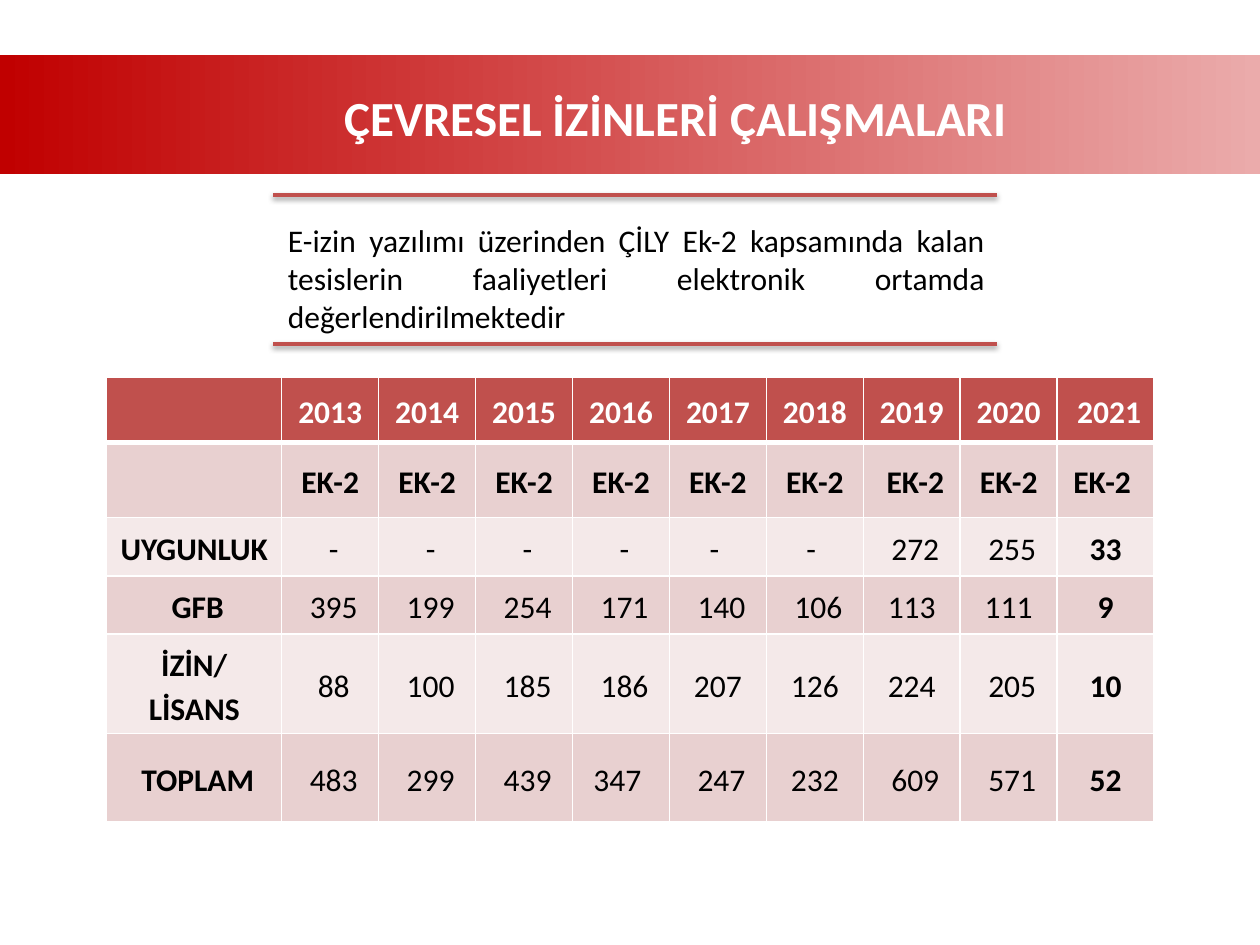
from dataclasses import dataclass

from lxml.etree import SubElement
from pptx import Presentation
from pptx.dml.color import RGBColor
from pptx.enum.shapes import MSO_CONNECTOR, MSO_SHAPE
from pptx.enum.text import MSO_ANCHOR, PP_ALIGN
from pptx.oxml import parse_xml
from pptx.oxml.ns import nsdecls, qn
from pptx.slide import Slide
from pptx.util import Pt

COLUMN_WIDTHS = [100] + [55.4] * 9
ROW_HEIGHTS = [37.2, 43, 33.3, 33.3, 50.4, 50.4]
PERMITS = [
    ["", "2013", "2014", "2015", "2016", "2017", "2018", "2019", "_2020_", "_2021"],
    ["", "EK-2", "EK-2", "EK-2", "EK-2", "EK-2", "EK-2", "_EK-2", "EK-2", "EK-2_"],
    ["UYGUNLUK", "_-", "_-", "_-", "_-", "-_", "-_", "_272", "_255", "33"],
    ["_GFB", "_395", "_199", "_254", "_171", "_140", "_106", "113", "111", "9"],
    ["İZİN/\nLİSANS", "_88", "_100", "_185", "_186", "207", "126", "224", "_205", "10"],
    ["_TOPLAM", "_483", "_299", "_439", "347_", "_247", "232", "_609", "_571", "52"],
]


def color(value):
    return RGBColor.from_string(value)


@dataclass
class PermitPage:
    page: Slide
    font: str = "Calibri"
    accent: str = "C0504D"
    light: str = "FFFFFF"
    dark: str = "000000"
    bands: tuple = ("E8D0D0", "F4E9E9")

    def style(self, frame, size, ink, bold, align, spacing=None):
        for para in frame.paragraphs:
            para.alignment = align
            para.line_spacing = spacing
            para.font.name = self.font
            para.font.size = Pt(size)
            para.font.bold = bold
            para.font.color.rgb = color(ink)

    def banner(self, left, top, width, height, start, end):
        shape = self.page.shapes.add_shape(
            MSO_SHAPE.RECTANGLE, Pt(left), Pt(top), Pt(width), Pt(height))
        shape.shadow.inherit = False
        shape.line.fill.background()
        shape.fill.gradient()
        shape.fill.gradient_angle = 0
        for stop, shade in zip(shape.fill.gradient_stops, (start, end)):
            stop.color.rgb = color(shade)

    def text(self, left, top, width, height, words, size, ink, bold, align):
        box = self.page.shapes.add_textbox(Pt(left), Pt(top), Pt(width), Pt(height))
        frame = box.text_frame
        frame.word_wrap = True
        frame.vertical_anchor = MSO_ANCHOR.MIDDLE
        frame.text = words
        self.style(frame, size, ink, bold, align)

    def rule(self, left, right, top):
        line = self.page.shapes.add_connector(
            MSO_CONNECTOR.STRAIGHT, Pt(left), Pt(top), Pt(right), Pt(top))
        line.line.color.rgb = color(self.accent)
        line.line.width = Pt(2)
        line._element.spPr.append(parse_xml(
            f'<a:effectLst {nsdecls("a")}>'
            f'<a:outerShdw blurRad="{Pt(3.1)}" dist="{Pt(1.6)}" dir="5400000" rotWithShape="0">'
            f'<a:srgbClr val="{self.dark}"><a:alpha val="38000"/></a:srgbClr>'
            '</a:outerShdw></a:effectLst>'))

    def borders(self, cell, row):
        widths = {"L": 1, "R": 1, "T": 3 if row == 1 else 1, "B": 3 if row == 0 else 1}
        properties = cell._tc.get_or_add_tcPr()
        for side, width in widths.items():
            edge = SubElement(properties, qn(f"a:ln{side}"), w=str(Pt(width)))
            fill = SubElement(edge, qn("a:solidFill"))
            SubElement(fill, qn("a:srgbClr"), val=self.light)

    def table(self, left, top, widths, heights, rows):
        table = self.page.shapes.add_table(
            len(rows), len(widths), Pt(left), Pt(top), Pt(sum(widths)), Pt(sum(heights))).table
        for column, width in zip(table.columns, widths):
            column.width = Pt(width)
        for row, (height, values) in enumerate(zip(heights, rows)):
            table.rows[row].height = Pt(height)
            for column, value in enumerate(values):
                cell = table.cell(row, column)
                cell.margin_left = cell.margin_right = 0
                cell.vertical_anchor = MSO_ANCHOR.MIDDLE
                self.borders(cell, row)
                cell.fill.solid()
                cell.fill.fore_color.rgb = color(self.bands[(row - 1) % 2] if row else self.accent)
                cell.text_frame.text = value.replace("_", chr(160))
                bold = row < 2 or column in (0, len(widths) - 1)
                ink = self.dark if row else self.light
                self.style(cell.text_frame, 18, ink, bold, PP_ALIGN.CENTER, 1.15)


def main():
    deck = Presentation()
    deck.slide_width, deck.slide_height = Pt(720), Pt(540)
    permits = PermitPage(deck.slides.add_slide(deck.slide_layouts[6]))
    permits.banner(0, 31.5, 720, 68, "C00000", "EBABAB")
    permits.text(150.5, 5.8, 471, 122.4, "ÇEVRESEL İZİNLERİ ÇALIŞMALARI",
                 28, permits.light, True, PP_ALIGN.CENTER)
    permits.text(157.5, 122.4, 412.5, 72.7,
                 "E-izin yazılımı üzerinden ÇİLY Ek-2 kapsamında kalan tesislerin "
                 "faaliyetleri elektronik ortamda değerlendirilmektedir",
                 18, permits.dark, False, PP_ALIGN.JUSTIFY)
    permits.table(61, 215.6, COLUMN_WIDTHS, ROW_HEIGHTS, PERMITS)
    for top in (196.6, 111.3):
        permits.rule(156, 569.5, top)
    deck.save("out.pptx")


if __name__ == "__main__":
    main()
